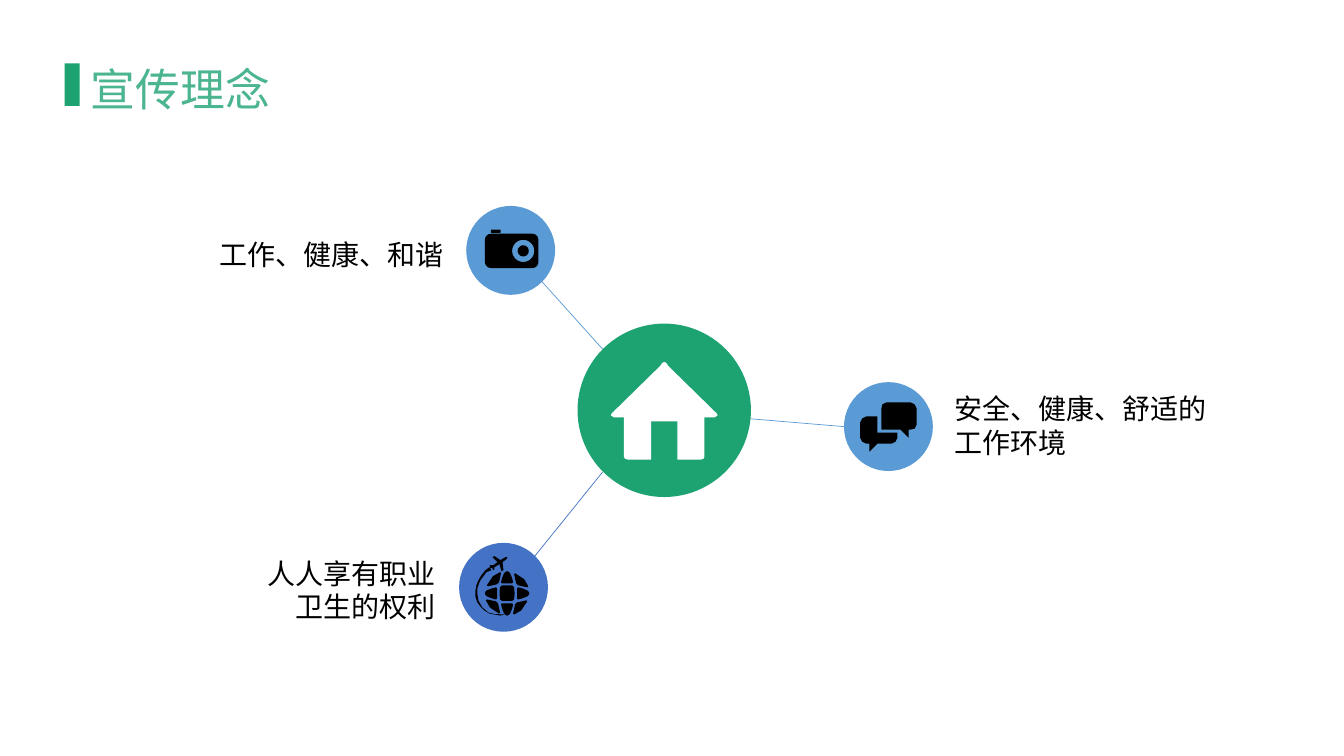
from math import cos, pi, sin

from lxml.etree import SubElement
from pptx import Presentation
from pptx.dml.color import RGBColor
from pptx.enum.shapes import MSO_CONNECTOR, MSO_SHAPE
from pptx.enum.text import MSO_ANCHOR, PP_ALIGN
from pptx.oxml.ns import qn
from pptx.util import Cm, Pt

GREEN = RGBColor(0x1D, 0xA2, 0x72)
MINT = RGBColor(0x4A, 0xB5, 0x8E)
SKY = RGBColor(0x5B, 0x9B, 0xD5)
BLUE = RGBColor(0x44, 0x72, 0xC4)
BLACK = RGBColor(0, 0, 0)
WHITE = RGBColor(255, 255, 255)
FONT = "Noto Sans CJK SC"
UNIT = Cm(0.0254)

TITLE = "宣传理念"
HUB = (16.74, 10.34)
HUB_SIZE, NODE_SIZE = 4.37, 2.24
CAMERA, CHAT, GLOBE = (12.87, 6.31), (22.39, 10.75), (12.69, 14.8)
NODES = [(CAMERA, SKY), (CHAT, SKY), (GLOBE, BLUE)]
SPOKES = [
    ((15.19, 8.8), (13.66, 7.1), SKY),
    ((18.75, 10.54), (21.27, 10.75), SKY),
    ((15.19, 11.89), (13.48, 14.01), BLUE),
]
LABELS = [
    ("工作、健康、和谐", 3.89, 5.46, 7.54, PP_ALIGN.RIGHT),
    ("人人享有职业卫生的权利", 6.17, 14.33, 5.05, PP_ALIGN.RIGHT),
    ("安全、健康、舒适的工作环境", 23.8, 10.19, 7.54, PP_ALIGN.LEFT),
]

ROOF = [(0, -48), (2, -47), (4, -44), (52, 3), (53, 5), (50, 7), (40, 7),
        (40, 46), (39, 48), (36, 49), (13, 49), (13, 11)]
FRONT = [(-7, 3), (-7, -18), (-6, -22), (-2, -24), (22, -24), (26, -22),
         (28, -18), (28, -2), (26, 2), (22, 3), (20, 3), (20, 11), (12, 3)]
BACK = [(-11, 6), (-11, -10), (-22, -10), (-26, -8), (-28, -4), (-28, 11),
        (-26, 15), (-22, 17), (-19, 17), (-19, 25), (-11, 17), (3, 17),
        (7, 15), (9, 11), (9, 6)]
EDGE = [(-3, -20), (-5, -15), (-6, -11), (-5, -10), (5, -10), (6, -11),
        (5, -15), (3, -20), (1.5, -21.5), (0, -22), (-1.5, -21.5)]
CORNER = [(-7, -21), (-14, -17), (-20, -8), (-19, -7), (-10, -9),
          (-8, -11), (-6, -20)]
CORE = [(-7, -6), (-5, -8), (5, -8), (7, -6), (7.5, 0), (7, 6), (5, 7.5),
        (-5, 7.5), (-7, 6), (-7.5, 0)]
PLANE = [(-13, -21), (-14, -19), (-11, -19), (-10, -17), (-9, -18),
         (-9, -20), (-4, -23), (-2, -16), (0, -17), (-1, -25), (3, -28),
         (4, -30), (2, -30), (-3, -27), (-9, -31), (-11, -30), (-6, -25),
         (-10, -22), (-14, -22)]
TRAIL = [(-14, -20), (-18, -17), (-22, -12), (-25, -7), (-27, -2), (-28, 4),
         (-28, 9), (-26, 15), (-23, 19), (-19, 23), (-14, 26), (-9, 27),
         (-3, 28), (1, 27), (-9, 26.5), (-15, 25), (-21, 20), (-25, 13),
         (-26, 6), (-26, 1), (-25, -2), (-23, -7), (-20, -11), (-17, -15),
         (-12, -17)]


def arc(x, y, r, start, turn, steps):
    angles = [start + turn * i / steps for i in range(steps + 1)]
    return [(x + r * cos(a), y + r * sin(a)) for a in angles]


def ring(x, y, r):
    return arc(x, y, r, 0, 2 * pi, 40)


def rounded(left, top, right, low, r):
    spots = [(right - r, low - r), (left + r, low - r),
             (left + r, top + r), (right - r, top + r)]
    return [p for i, (x, y) in enumerate(spots)
            for p in arc(x, y, r, i * pi / 2, pi / 2, 6)]


def spin(points, turns):
    for _ in range(turns):
        points = [(-y, x) for x, y in points]
    return points


def paint(shape, color):
    shape.shadow.inherit = False
    shape.fill.solid()
    shape.fill.fore_color.rgb = color
    shape.line.fill.background()


def draw(shapes, center, rings, color):
    rings = [[(x * UNIT, y * UNIT) for x, y in points] for points in rings]
    pen = shapes.build_freeform(*rings[0][0])
    pen.add_line_segments(rings[0][1:])
    for points in rings[1:]:
        pen.move_to(*points[0])
        pen.add_line_segments(points[1:])
    paint(pen.convert_to_shape(*map(Cm, center)), color)


def disc(shapes, center, size, color):
    x, y = center
    shape = shapes.add_shape(MSO_SHAPE.OVAL, Cm(x - size / 2),
                             Cm(y - size / 2), Cm(size), Cm(size))
    paint(shape, color)


def write(shape, text, size, color, align, anchor):
    frame = shape.text_frame
    frame.text = text
    frame.word_wrap = True
    frame.vertical_anchor = anchor
    line = frame.paragraphs[0]
    line.alignment = align
    font = line.runs[0].font
    font.size, font.name = Pt(size), FONT
    font.color.rgb = color
    SubElement(line.runs[0].font._element, qn("a:ea")).set("typeface", FONT)
    return line


def main():
    deck = Presentation()
    deck.slide_width, deck.slide_height = Cm(33.87), Cm(19.05)
    slide = deck.slides.add_slide(deck.slide_layouts[5])
    shapes = slide.shapes

    title = shapes.title
    title.left, title.top = Cm(2.03), Cm(0.48)
    title.width, title.height = Cm(6.93), Cm(3.68)
    line = write(title, TITLE, 32, MINT, PP_ALIGN.LEFT, MSO_ANCHOR.MIDDLE)
    line.line_spacing = 0.9
    bar = shapes.add_shape(MSO_SHAPE.RECTANGLE, Cm(1.63), Cm(1.6),
                           Cm(0.38), Cm(1.07))
    paint(bar, GREEN)

    for start, end, color in SPOKES:
        spoke = shapes.add_connector(MSO_CONNECTOR.STRAIGHT,
                                     *map(Cm, start + end))
        spoke.line.color.rgb = color
        spoke.line.width = Pt(0.5)
        SubElement(spoke._element.spPr, qn("a:effectLst"))
    for center, color in NODES:
        disc(shapes, center, NODE_SIZE, color)
    disc(shapes, HUB, HUB_SIZE, GREEN)

    house = ROOF + [(-x, y) for x, y in reversed(ROOF[1:])]
    draw(shapes, HUB, [house], WHITE)
    camera = [rounded(-25.5, -16.5, 27.5, 17.5, 6), ring(12.5, 0.5, 11),
              ring(12.5, 0.5, 5.5), rounded(-19.5, -20.5, -10, -17.5, 0.5)]
    draw(shapes, CAMERA, camera, BLACK)
    draw(shapes, CHAT, [BACK, FRONT], BLACK)

    world = shapes.add_group_shape().shapes
    tiles = [CORE] + [spin(t, i) for t in (EDGE, CORNER) for i in range(4)]
    for tile in tiles:
        draw(world, GLOBE, [[(x + 3.5, y + 6) for x, y in tile]], BLACK)
    for part in (PLANE, TRAIL):
        draw(world, GLOBE, [part], BLACK)

    for text, left, top, width, align in LABELS:
        label = shapes.add_textbox(Cm(left), Cm(top), Cm(width), Cm(1.5))
        write(label, text, 20, BLACK, align, MSO_ANCHOR.BOTTOM)

    deck.save("out.pptx")


if __name__ == "__main__":
    main()
